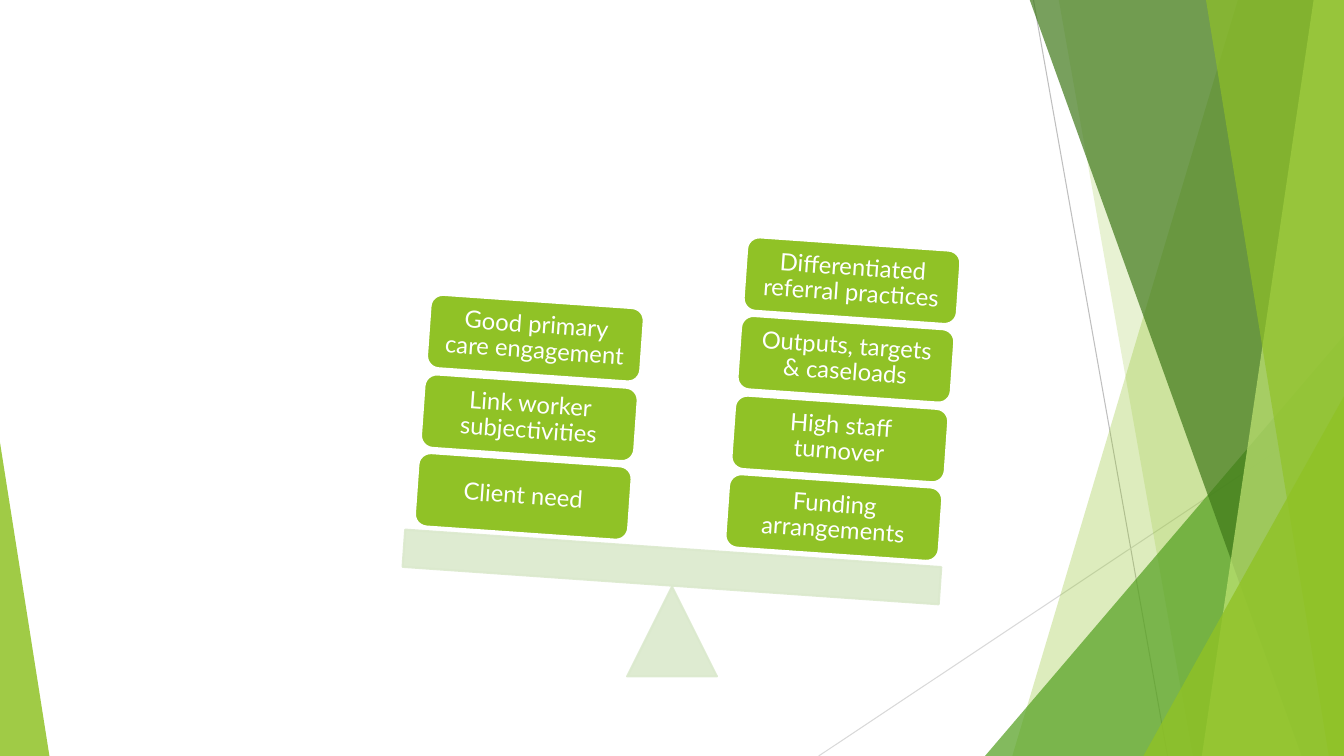
from dataclasses import dataclass

from lxml.etree import SubElement
from pptx import Presentation
from pptx.dml.color import RGBColor
from pptx.enum.shapes import MSO_CONNECTOR, MSO_SHAPE
from pptx.enum.text import MSO_ANCHOR, PP_ALIGN
from pptx.oxml.ns import qn
from pptx.shapes.autoshape import Shape
from pptx.slide import Slide
from pptx.util import Emu, Pt

EMU_PER_PX = 9144
WIDTH, HEIGHT = 1333, 750
TOP = -1
TILT = 4
BLOCK_WIDTH, BLOCK_HEIGHT = 212, 73
STACK_SHIFT = 6
STACK_RISE = 78.4
COLORS = {
    "lime": "90C226",
    "green": "54A021",
    "forest": "3F7819",
    "pale_lime": "C0E474",
    "scale": "DBE9CD",
    "white": "FFFFFF",
    "gray": "BFBFBF",
    "light_gray": "D9D9D9",
}


@dataclass
class Ray:
    start: tuple[int, int]
    end: tuple[int, int]
    color: str


@dataclass
class Band:
    top_x: int
    bottom_x: int
    color: str
    opacity: int


@dataclass
class Triangle:
    left: int
    top: int
    width: int
    apex: int
    color: str
    opacity: int


@dataclass
class Stack:
    left: int
    top: int
    labels: list[str]


RAYS = [
    Ray((1025, 0), (1158, HEIGHT), "gray"),
    Ray((WIDTH, 403), (812, HEIGHT), "light_gray"),
]
BACKDROP = [
    Band(1228, 1004, "lime", 30),
    Band(1050, 1183, "lime", 20),
    Triangle(977, 333, 356, 1, "green", 72),
    Band(1021, 1291, "forest", 70),
    Band(1303, 1192, "pale_lime", 70),
    Band(1196, 1318, "lime", 65),
    Triangle(1134, 393, 199, 1, "lime", 80),
    Triangle(0, 439, 49, 0, "lime", 85),
]
STACKS = [
    Stack(721, 477, [
        "Funding arrangements",
        "High staff turnover",
        "Outputs, targets & caseloads",
        "Differentiated referral practices",
    ]),
    Stack(413, 456, [
        "Client need",
        "Link worker subjectivities",
        "Good primary care engagement",
    ]),
]


def px(value: float) -> Emu:
    return Emu(round(value * EMU_PER_PX))


def rgb(name: str) -> RGBColor:
    return RGBColor.from_string(COLORS[name])


def style(shape: Shape, fill: str, line: str | None = None, opacity: int = 100) -> None:
    shape.shadow.inherit = False
    shape.fill.solid()
    shape.fill.fore_color.rgb = rgb(fill)
    if line:
        shape.line.color.rgb = rgb(line)
        shape.line.width = Pt(1.5)
    else:
        shape.line.fill.background()
    if opacity < 100:
        for color in shape.element.spPr.findall(".//" + qn("a:srgbClr")):
            SubElement(color, qn("a:alpha"), val=str(opacity * 1000))


def add_preset(slide: Slide, kind: MSO_SHAPE, left: int, top: int, width: int, height: int) -> Shape:
    return slide.shapes.add_shape(kind, px(left), px(top), px(width), px(height))


def draw_ray(slide: Slide, ray: Ray) -> None:
    connector = slide.shapes.add_connector(
        MSO_CONNECTOR.STRAIGHT, *map(px, ray.start + ray.end))
    connector.line.color.rgb = rgb(ray.color)
    connector.line.width = Pt(0.75)
    SubElement(connector.element.spPr, qn("a:effectLst"))


def draw_band(slide: Slide, band: Band) -> None:
    builder = slide.shapes.build_freeform(band.top_x, TOP, scale=EMU_PER_PX)
    builder.add_line_segments(
        [(WIDTH, TOP), (WIDTH, HEIGHT), (band.bottom_x, HEIGHT)], close=True)
    style(builder.convert_to_shape(), band.color, opacity=band.opacity)


def draw_triangle(slide: Slide, triangle: Triangle) -> None:
    shape = add_preset(slide, MSO_SHAPE.ISOSCELES_TRIANGLE, triangle.left,
                       triangle.top, triangle.width, HEIGHT - triangle.top)
    shape.adjustments[0] = triangle.apex
    style(shape, triangle.color, opacity=triangle.opacity)


def write_text(shape: Shape, text: str, *, size: int, color: str, font: str, inset: int) -> None:
    frame = shape.text_frame
    frame.word_wrap = True
    frame.vertical_anchor = MSO_ANCHOR.MIDDLE
    frame.margin_left = frame.margin_right = px(inset)
    frame.margin_top = frame.margin_bottom = px(inset)
    paragraph = frame.paragraphs[0]
    paragraph.alignment = PP_ALIGN.CENTER
    paragraph.line_spacing = 0.9
    paragraph.space_after = Pt(6)
    run = paragraph.add_run()
    run.text = text
    run.font.size = Pt(size)
    run.font.name = font
    run.font.color.rgb = rgb(color)


def draw_balance(slide: Slide) -> None:
    pivot = add_preset(slide, MSO_SHAPE.ISOSCELES_TRIANGLE, 622, 582, 89, 89)
    beam = add_preset(slide, MSO_SHAPE.RECTANGLE, 400, 544, 533, 37)
    beam.rotation = TILT
    for shape in (pivot, beam):
        style(shape, "scale", "scale", opacity=90)


def draw_stack(slide: Slide, stack: Stack) -> None:
    for level, label in enumerate(stack.labels):
        block = add_preset(slide, MSO_SHAPE.ROUNDED_RECTANGLE,
                           stack.left + level * STACK_SHIFT,
                           stack.top - round(level * STACK_RISE),
                           BLOCK_WIDTH, BLOCK_HEIGHT)
        block.rotation = TILT
        style(block, "lime", "white")
        write_text(block, label, size=17, color="white", font="Lato", inset=10)


def main() -> None:
    presentation = Presentation()
    presentation.slide_width, presentation.slide_height = px(WIDTH), px(HEIGHT)
    slide = presentation.slides.add_slide(presentation.slide_layouts.get_by_name("Blank"))
    for ray in RAYS:
        draw_ray(slide, ray)
    for part in BACKDROP:
        if isinstance(part, Band):
            draw_band(slide, part)
        else:
            draw_triangle(slide, part)
    draw_balance(slide)
    for stack in STACKS:
        draw_stack(slide, stack)
    presentation.save("out.pptx")


if __name__ == "__main__":
    main()
